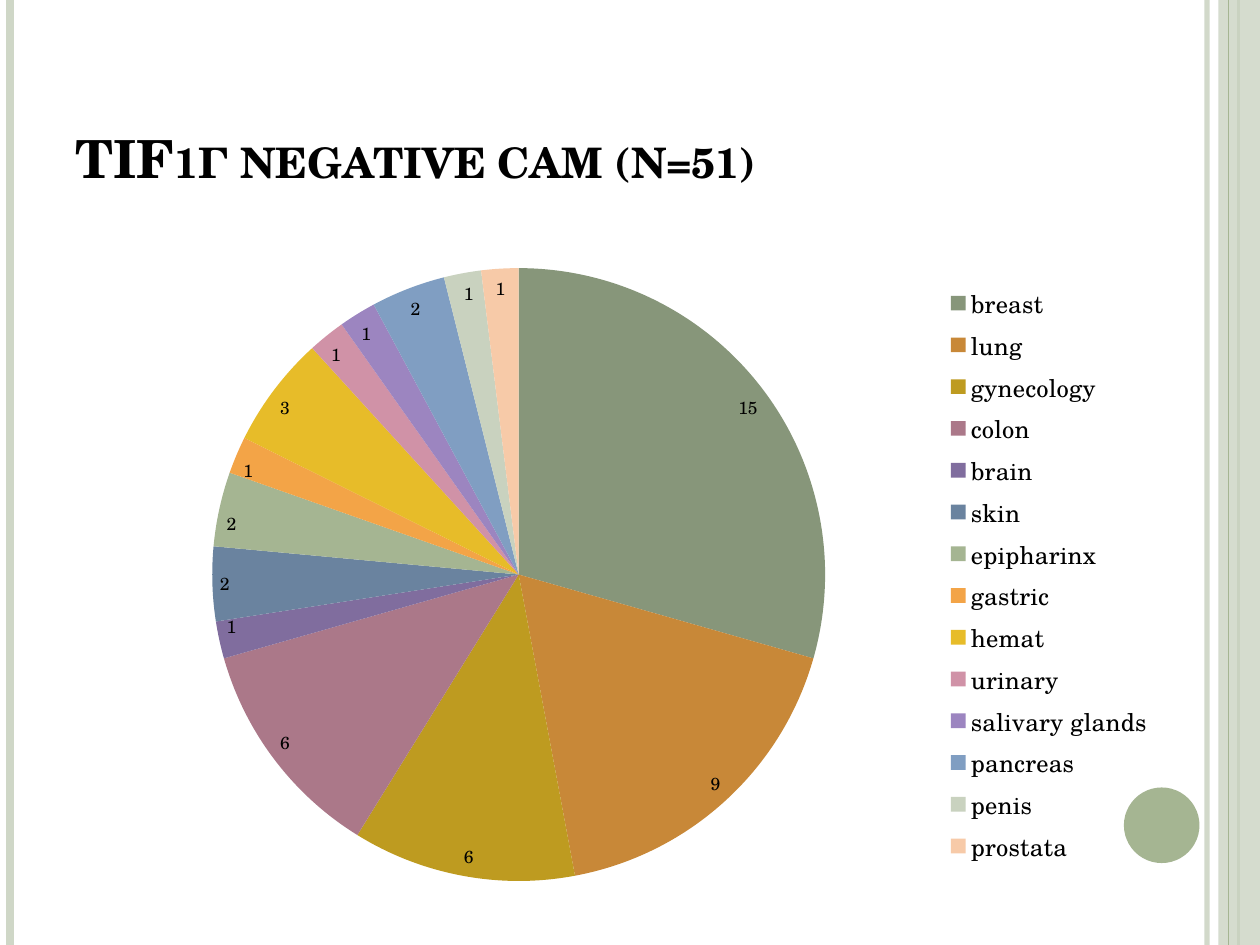
from lxml.etree import SubElement
from pptx import Presentation
from pptx.chart.data import CategoryChartData as Data
from pptx.dml.color import RGBColor
from pptx.enum.chart import XL_CHART_TYPE as Kind, XL_LABEL_POSITION as Spot, XL_LEGEND_POSITION as Side
from pptx.enum.shapes import MSO_CONNECTOR as Link, MSO_SHAPE as Form
from pptx.enum.text import MSO_ANCHOR as Anchor
from pptx.oxml.ns import qn
from pptx.util import Inches, Pt

FONT = "TeX Gyre Schola"
PALE, SAGE = "CFD7C7", "A5B592"
SITES = [
    ("breast", 15, "87967A"), ("lung", 9, "C88838"),
    ("gynecology", 6, "BE9B20"), ("colon", 6, "AB7889"),
    ("brain", 1, "806D9E"), ("skin", 2, "6A839F"),
    ("epipharinx", 2, SAGE), ("gastric", 1, "F3A447"),
    ("hemat", 3, "E7BC29"), ("urinary", 1, "D092A7"),
    ("salivary glands", 1, "9C85C0"), ("pancreas", 2, "809EC2"),
    ("penis", 1, "C9D2BF"), ("prostata", 1, "F7CAA8"),
]


def paint(fill, tone, alpha=100):
    """Set a solid fill from a hex colour and an opacity in percent."""
    fill.solid()
    fill.fore_color.rgb = RGBColor.from_string(tone)
    if alpha < 100:
        clr = fill._xPr.find(".//" + qn("a:srgbClr"))
        SubElement(clr, qn("a:alpha")).set("val", str(alpha * 1000))


def style(font, size, bold=False):
    """Set the common face and black colour at a given size."""
    font.name, font.size, font.bold = FONT, Pt(size), bold
    font.color.rgb = RGBColor.from_string("000000")


def add_rule(slide, x, tone, width, alpha=100):
    """Draw a vertical line over the full slide height."""
    rule = slide.shapes.add_connector(
        Link.STRAIGHT, Inches(x), 0, Inches(x), Inches(7.5))
    rule.line.width = Pt(width)
    paint(rule.line.fill, tone, alpha)
    SubElement(rule._element.spPr, qn("a:effectLst"))


def add_form(slide, form, box, tone, alpha=100):
    """Draw a filled shape without outline."""
    shape = slide.shapes.add_shape(form, *map(Inches, box))
    shape.shadow.inherit = False
    paint(shape.fill, tone, alpha)
    shape.line.fill.background()


def add_title(slide, text):
    """Add the bold small-caps title."""
    box = slide.shapes.add_textbox(*map(Inches, (0.5, 0.3, 8.17, 1.25)))
    frame = box.text_frame
    frame.word_wrap = True
    frame.vertical_anchor = Anchor.BOTTOM
    run = frame.paragraphs[0].add_run()
    run.text = text
    style(run.font, 30, True)
    run._r.get_or_add_rPr().set("cap", "small")


def add_pie(slide):
    """Add the pie of tumour sites with its legend and labels."""
    names, counts, tones = zip(*SITES)
    data = Data()
    data.categories = names
    data.add_series("Series 1", counts)
    box = map(Inches, (0.75, 1.99, 8.5, 5.14))
    chart = slide.shapes.add_chart(Kind.PIE, *box, data).chart
    chart.has_title = False
    style(chart.font, 10)
    chart.has_legend = True
    chart.legend.position = Side.RIGHT
    chart.legend.include_in_layout = False
    style(chart.legend.font, 14)
    plot = chart.plots[0]
    plot.vary_by_categories = True
    for i, tone in enumerate(tones):
        paint(plot.series[0].points[i].format.fill, tone)
    plot.has_data_labels = True
    labels = plot.data_labels
    labels.show_value = True
    labels.show_percentage = False
    labels.position = Spot.INSIDE_END
    style(labels.font, 10)


def main():
    """Build and save the slide."""
    deck = Presentation()
    deck.slide_width, deck.slide_height = Inches(10), Inches(7.5)
    slide = deck.slides.add_slide(deck.slide_layouts[6])
    add_rule(slide, 9.58, PALE, 3, 93)
    add_rule(slide, 0.08, PALE, 4.5)
    add_rule(slide, 9.83, SAGE, 1.5)
    add_form(slide, Form.RECTANGLE, (9.67, 0, 0.33, 7.5), PALE, 87)
    add_rule(slide, 9.75, SAGE, 0.75)
    add_form(slide, Form.OVAL, (8.92, 6.25, 0.6, 0.6), SAGE)
    add_title(slide, "TIF1γ negative cam (n=51)")
    add_pie(slide)
    deck.save("out.pptx")


if __name__ == "__main__":
    main()
